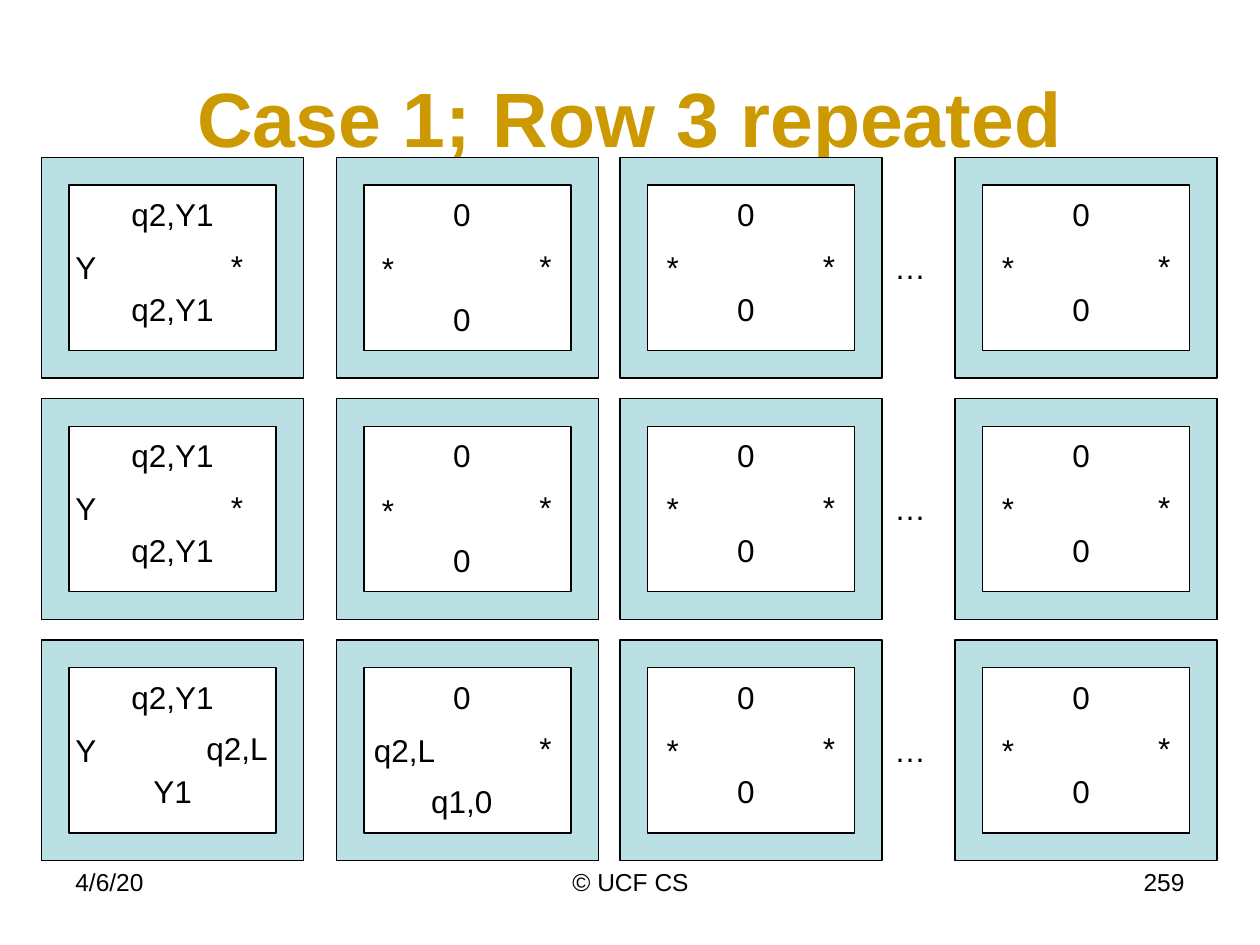
from dataclasses import dataclass

from pptx import Presentation
from pptx.dml.color import RGBColor
from pptx.enum.shapes import MSO_SHAPE
from pptx.enum.text import MSO_ANCHOR, MSO_AUTO_SIZE, PP_ALIGN
from pptx.slide import Slide
from pptx.text.text import TextFrame
from pptx.util import Inches, Pt

LEFT, MID, RIGHT = PP_ALIGN.LEFT, PP_ALIGN.CENTER, PP_ALIGN.RIGHT
TOP, STEP = 1.25, 1.915
TILE_WIDE, TILE_HIGH = 2.08, 1.75


@dataclass
class Slot:
    dx: float
    dy: float
    wide: float
    align: PP_ALIGN = MID


@dataclass
class Column:
    x: float
    slots: list[Slot]
    rows: list[list[str]]


def color(code: str) -> RGBColor:
    return RGBColor.from_string(code)


def style(frame: TextFrame, text: str, size: int, align: PP_ALIGN,
          code: str = "000000", bold: bool = False) -> None:
    frame.text = text
    line = frame.paragraphs[0]
    line.alignment = align
    font = line.runs[0].font
    font.name = "Arial"
    font.size = Pt(size)
    font.bold = bold
    font.color.rgb = color(code)


def label(slide: Slide, text: str, x: float, y: float, wide: float,
          align: PP_ALIGN = MID, high: float = 0.5, size: int = 18) -> None:
    box = slide.shapes.add_textbox(Inches(x), Inches(y), Inches(wide), Inches(high))
    frame = box.text_frame
    frame.word_wrap = True
    if size == 18:
        frame.auto_size = MSO_AUTO_SIZE.SHAPE_TO_FIT_TEXT
    style(frame, text, size, align)


def tile(slide: Slide, x: float, y: float, slots: list[Slot], words: list[str]) -> None:
    shape = slide.shapes.add_shape(
        MSO_SHAPE.FRAME, Inches(x), Inches(y), Inches(TILE_WIDE), Inches(TILE_HIGH))
    shape.shadow.inherit = False
    shape.fill.solid()
    shape.fill.fore_color.rgb = color("BBE0E3")
    shape.line.color.rgb = color("000000")
    shape.line.width = Pt(0.75)
    for slot, word in zip(slots, words):
        label(slide, word, x + slot.dx, y + slot.dy, slot.wide, slot.align)


FIRST = [Slot(0.25, 0.25, 1.58), Slot(1.09, 0.66, 0.92),
         Slot(0.17, 0.67, 0.92, LEFT), Slot(0.25, 1, 1.58)]
SECOND = [Slot(0.41, 0.25, 1.17), Slot(1.41, 0.66, 0.5),
          Slot(-0.05, 0.68, 0.92), Slot(0.41, 1.08, 1.17)]
SECOND_END = [*SECOND[:2], Slot(0.08, 0.67, 0.92), SECOND[3]]
PLAIN = [Slot(0.75, 0.25, 0.5), Slot(1.41, 0.66, 0.5),
         Slot(0.17, 0.67, 0.5), Slot(0.75, 1, 0.5)]
BLANK = ["0", "*", "*", "0"]
HEAD = ["q2,Y1", "*", "Y", "q2,Y1"]

COLUMNS = [
    Column(0.33, FIRST, [HEAD, HEAD, ["q2,Y1", "q2,L", "Y", "Y1"]]),
    Column(2.67, SECOND, [BLANK, BLANK, ["0", "*", "q2,L", "q1,0"]]),
    Column(4.92, PLAIN, [BLANK] * 3),
    Column(7.58, PLAIN, [BLANK] * 3),
]


def main() -> None:
    deck = Presentation()
    deck.slide_width, deck.slide_height = Inches(10), Inches(7.5)
    slide = deck.slides.add_slide(deck.slide_layouts[5])

    title = slide.shapes.title
    title.left, title.top = Inches(0.5), Inches(0.3)
    title.width, title.height = Inches(9), Inches(1.25)
    title.text_frame.vertical_anchor = MSO_ANCHOR.MIDDLE
    style(title.text_frame, "Case 1; Row 3 repeated", 44, MID, "CC9900", True)

    for text, x, wide, align in [("4/6/20", 0.5, 2.33, LEFT),
                                 ("© UCF CS", 3.42, 3.17, MID),
                                 ("259", 7.17, 2.33, RIGHT)]:
        label(slide, text, x, 6.83, wide, align, 0.52, 14)

    for row in range(3):
        y = TOP + row * STEP
        for col in COLUMNS:
            words = col.rows[row]
            slots = SECOND_END if words[2] == "q2,L" else col.slots
            tile(slide, col.x, y, slots, words)
        label(slide, "…", 7, y + 0.67, 0.92, LEFT)

    deck.save("out.pptx")


if __name__ == "__main__":
    main()
